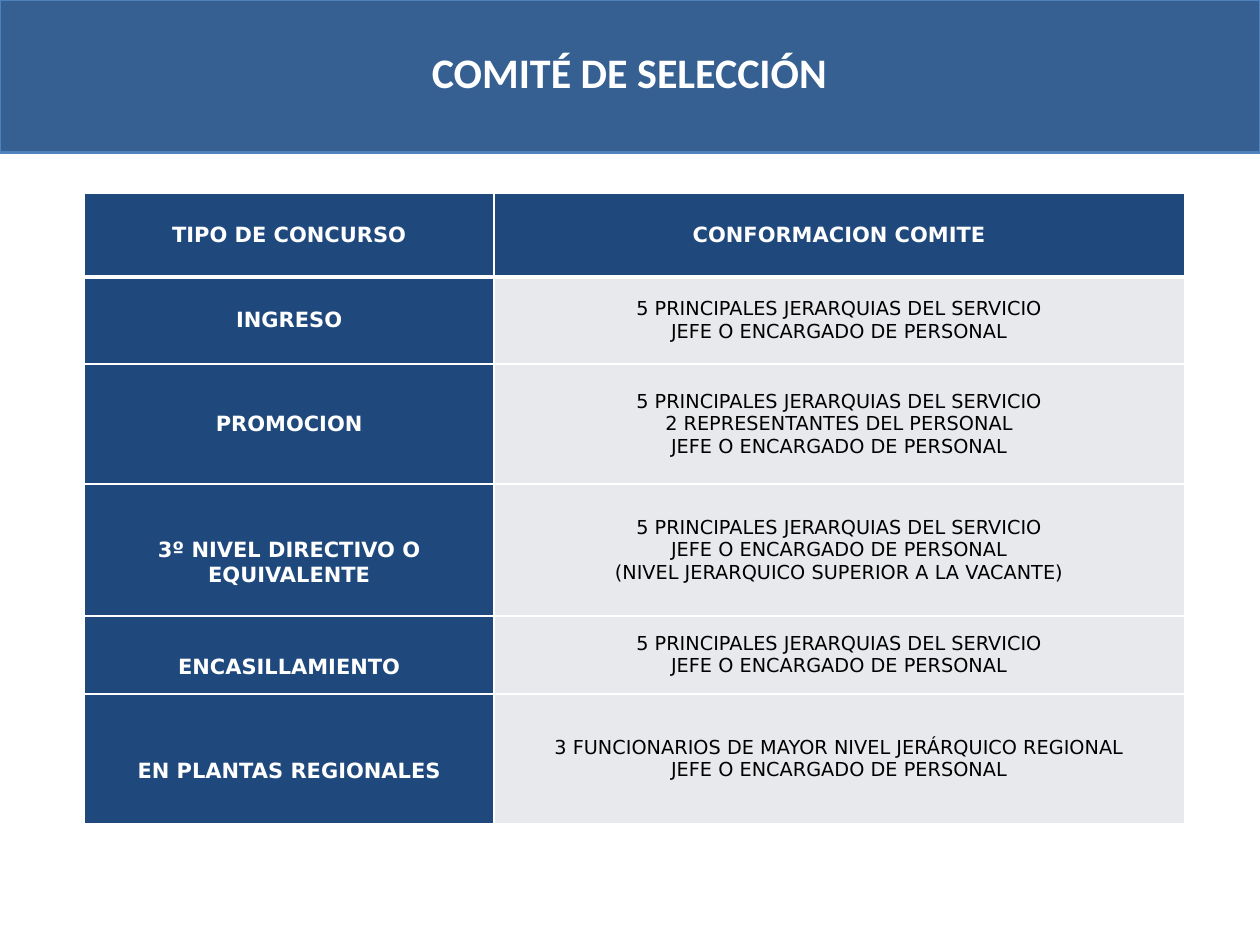
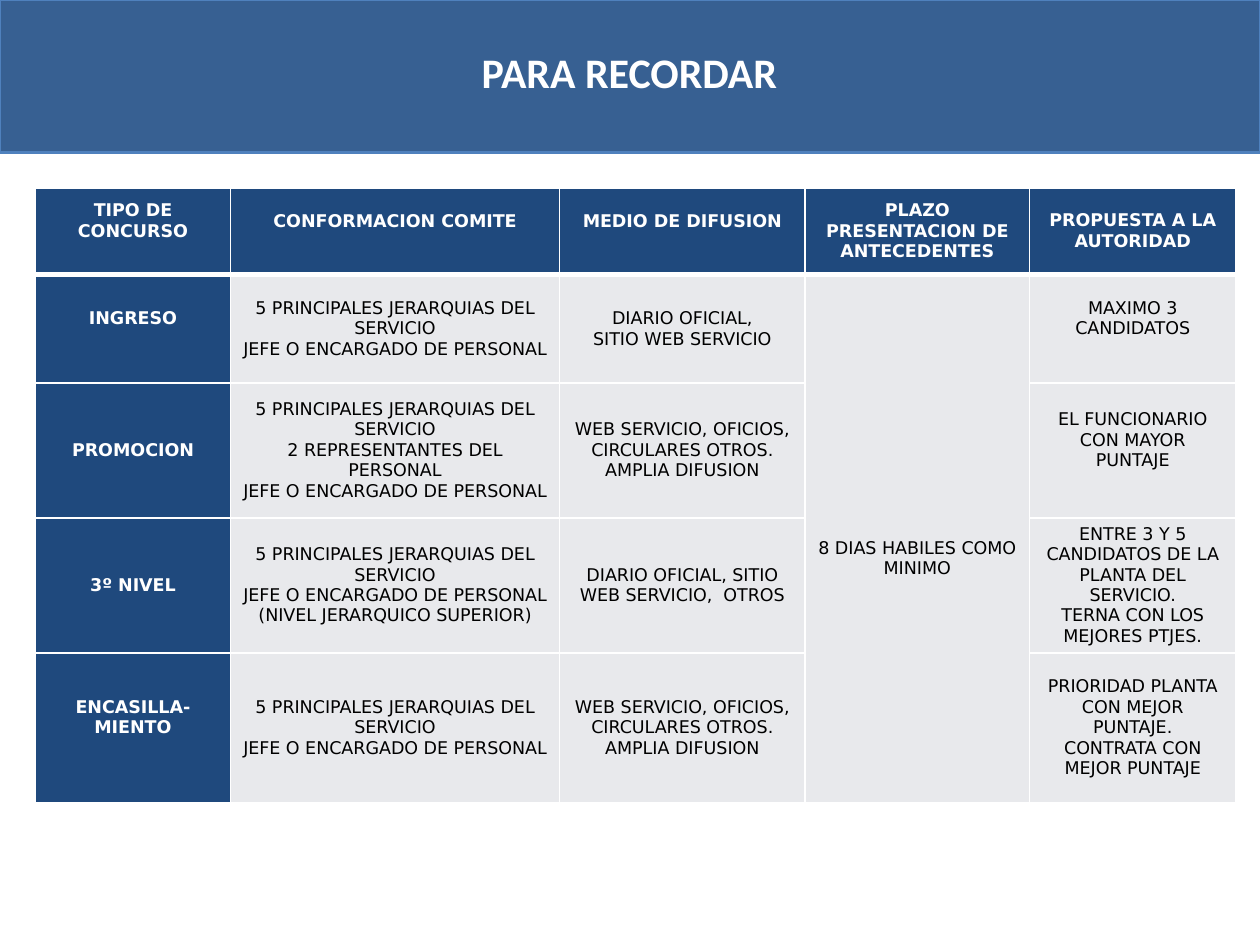
"""Build two slides of tables on staff selection contests."""
from dataclasses import dataclass
from lxml.etree import SubElement
from pptx import Presentation
from pptx.dml.color import RGBColor as RGB
from pptx.enum.shapes import MSO_SHAPE as Shape
from pptx.enum.text import MSO_ANCHOR as Anchor, MSO_AUTO_SIZE as Auto, PP_ALIGN as Align
from pptx.oxml.ns import qn
from pptx.util import Inches, Pt

TOP = "5 PRINCIPALES JERARQUIAS DEL SERVICIO"
STAFF = "2 REPRESENTANTES DEL PERSONAL"
BOSS = "JEFE O ENCARGADO DE PERSONAL"
WEB = "WEB SERVICIO, OFICIOS, CIRCULARES OTROS.\nAMPLIA DIFUSION"

SLIDES = [
    {
        "title": "COMITÉ DE SELECCIÓN",
        "at": (0.67, 1.53),
        "cols": [3.25, 5.48],
        "rows": [0.67, 0.69, 0.95, 1.05, 0.62, 1.03],
        "sizes": (12, 11),
        "cells": [
            ["TIPO DE CONCURSO", "CONFORMACION COMITE"],
            ["INGRESO", f"{TOP}\n{BOSS}"],
            ["PROMOCION", f"{TOP}\n{STAFF}\n{BOSS}"],
            ["3º NIVEL DIRECTIVO O EQUIVALENTE",
             f"{TOP}\n{BOSS}\n(NIVEL JERARQUICO SUPERIOR A LA VACANTE)"],
            ["ENCASILLAMIENTO", f"{TOP}\n{BOSS}"],
            ["EN PLANTAS REGIONALES",
             f"3 FUNCIONARIOS DE MAYOR NIVEL JERÁRQUICO REGIONAL\n{BOSS}"],
        ],
        "merge": [],
        "lower": {(3, 0): 0.2, (4, 0): 0.2, (5, 0): 0.2},
        "raise": [],
    },
    {
        "title": "PARA RECORDAR",
        "at": (0.28, 1.49),
        "cols": [1.55, 2.61, 1.95, 1.78, 1.64],
        "rows": [0.69, 0.86, 1.07, 1.07, 1.19],
        "sizes": (10, 10),
        "cells": [
            ["TIPO DE CONCURSO", "CONFORMACION COMITE", "MEDIO DE DIFUSION",
             "PLAZO PRESENTACION DE ANTECEDENTES", "PROPUESTA A LA AUTORIDAD"],
            ["INGRESO", f"{TOP}\n{BOSS}", "DIARIO OFICIAL,\nSITIO WEB SERVICIO",
             "8 DIAS HABILES COMO MINIMO", "MAXIMO 3 CANDIDATOS"],
            ["PROMOCION", f"{TOP}\n{STAFF}\n{BOSS}", WEB, "",
             "EL FUNCIONARIO CON MAYOR PUNTAJE"],
            ["3º NIVEL", f"{TOP}\n{BOSS}\n(NIVEL JERARQUICO SUPERIOR)",
             "DIARIO OFICIAL, SITIO WEB SERVICIO,  OTROS", "",
             "ENTRE 3 Y 5 CANDIDATOS DE LA PLANTA DEL SERVICIO.\n"
             "TERNA CON LOS MEJORES PTJES."],
            ["ENCASILLA-MIENTO", f"{TOP}\n{BOSS}", WEB, "",
             "PRIORIDAD PLANTA CON MEJOR PUNTAJE.\nCONTRATA CON MEJOR PUNTAJE"],
        ],
        "merge": [((1, 3), (4, 3))],
        "lower": {(1, 3): 0.32},
        "raise": [(0, 0), (0, 1), (0, 2), (1, 0), (1, 4), (2, 4), (4, 0)],
    },
]


@dataclass(frozen=True)
class Theme:
    band: str = "376092"
    edge: str = "4F81BD"
    head: str = "1F497D"
    body: str = "E8E9EC"
    white: str = "FFFFFF"
    black: str = "000000"
    title: int = 24
    face: str = "Calibri"
    grid: str = "DejaVu Sans"
    pad: float = 0.05
    lift: float = 0.16


THEME = Theme()


def color(code):
    return RGB.from_string(code)


def style(frame, face, size, code, bold):
    for para in frame.paragraphs:
        para.alignment = Align.CENTER
        for run in para.runs:
            font = run.font
            font.name, font.size, font.bold = face, Pt(size), bold
            font.color.rgb = color(code)


def add_band(slide, width):
    band = slide.shapes.add_shape(Shape.RECTANGLE, 0, 0, width, Inches(1.21))
    band.shadow.inherit = False
    band.fill.solid()
    band.fill.fore_color.rgb = color(THEME.band)
    band.line.color.rgb = color(THEME.edge)
    band.line.width = Pt(1.5)
    slide.slide_layout.shapes._spTree.insert(2, band._element)


def set_title(slide, text):
    box = slide.shapes.title
    box.left, box.top, box.width, box.height = map(Inches, (0.44, 0.31, 9.11, 0.82))
    frame = box.text_frame
    frame.text = text
    frame.auto_size = Auto.NONE
    frame.vertical_anchor = Anchor.TOP
    frame.margin_top = Inches(0.06)
    style(frame, THEME.face, THEME.title, THEME.white, True)


def set_edges(cell, row):
    props = cell._tc.get_or_add_tcPr()
    thick = {("B", 0), ("T", 1)}
    for side in "LRTB":
        width = Pt(3 if (side, row) in thick else 1)
        line = SubElement(props, qn(f"a:ln{side}"), w=str(width))
        fill = SubElement(line, qn("a:solidFill"))
        SubElement(fill, qn("a:srgbClr"), val=THEME.white)


def fill_cell(cell, text, row, col, data):
    dark = row == 0 or col == 0
    set_edges(cell, row)
    cell.fill.solid()
    cell.fill.fore_color.rgb = color(THEME.head if dark else THEME.body)
    cell.vertical_anchor = Anchor.MIDDLE
    cell.margin_top = Inches(THEME.pad + data["lower"].get((row, col), 0))
    cell.margin_bottom = Inches(THEME.pad + THEME.lift * ((row, col) in data["raise"]))
    cell.text_frame.text = text
    size = data["sizes"][0 if dark else 1]
    style(cell.text_frame, THEME.grid, size, THEME.white if dark else THEME.black, dark)


def add_grid(slide, data):
    rows, cols = data["rows"], data["cols"]
    spot = map(Inches, (*data["at"], sum(cols), sum(rows)))
    table = slide.shapes.add_table(len(rows), len(cols), *spot).table
    for part, width in zip(table.columns, cols):
        part.width = Inches(width)
    for part, height in zip(table.rows, rows):
        part.height = Inches(height)
    for row, line in enumerate(data["cells"]):
        for col, text in enumerate(line):
            fill_cell(table.cell(row, col), text, row, col, data)
    for start, end in data["merge"]:
        table.cell(*start).merge(table.cell(*end))


def main():
    deck = Presentation()
    deck.slide_width, deck.slide_height = Inches(10), Inches(7.5)
    layout = deck.slide_layouts[5]
    for num, data in enumerate(SLIDES):
        slide = deck.slides.add_slide(layout)
        if num == 0:
            add_band(slide, deck.slide_width)
        set_title(slide, data["title"])
        add_grid(slide, data)
    deck.save("out.pptx")


if __name__ == "__main__":
    main()
